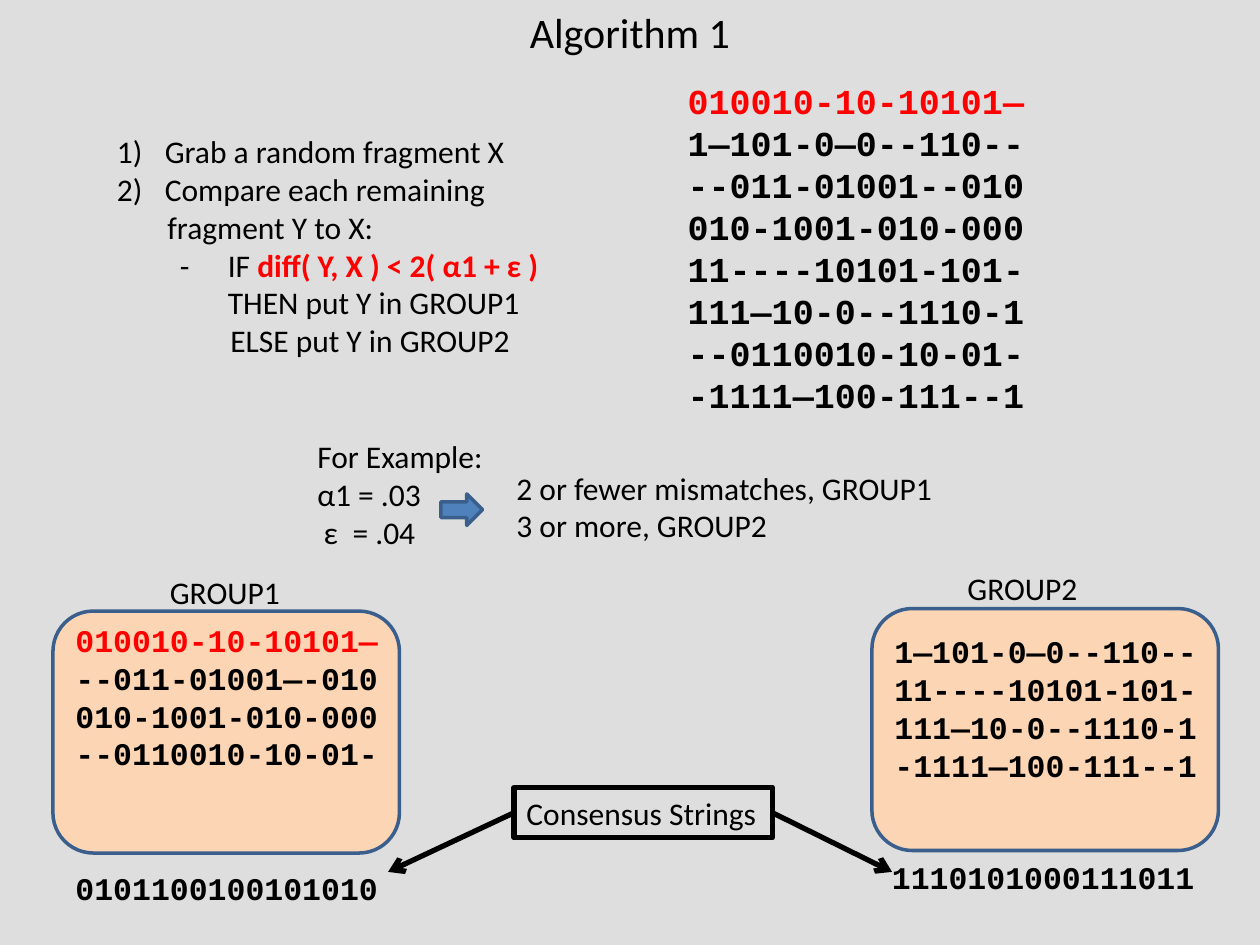
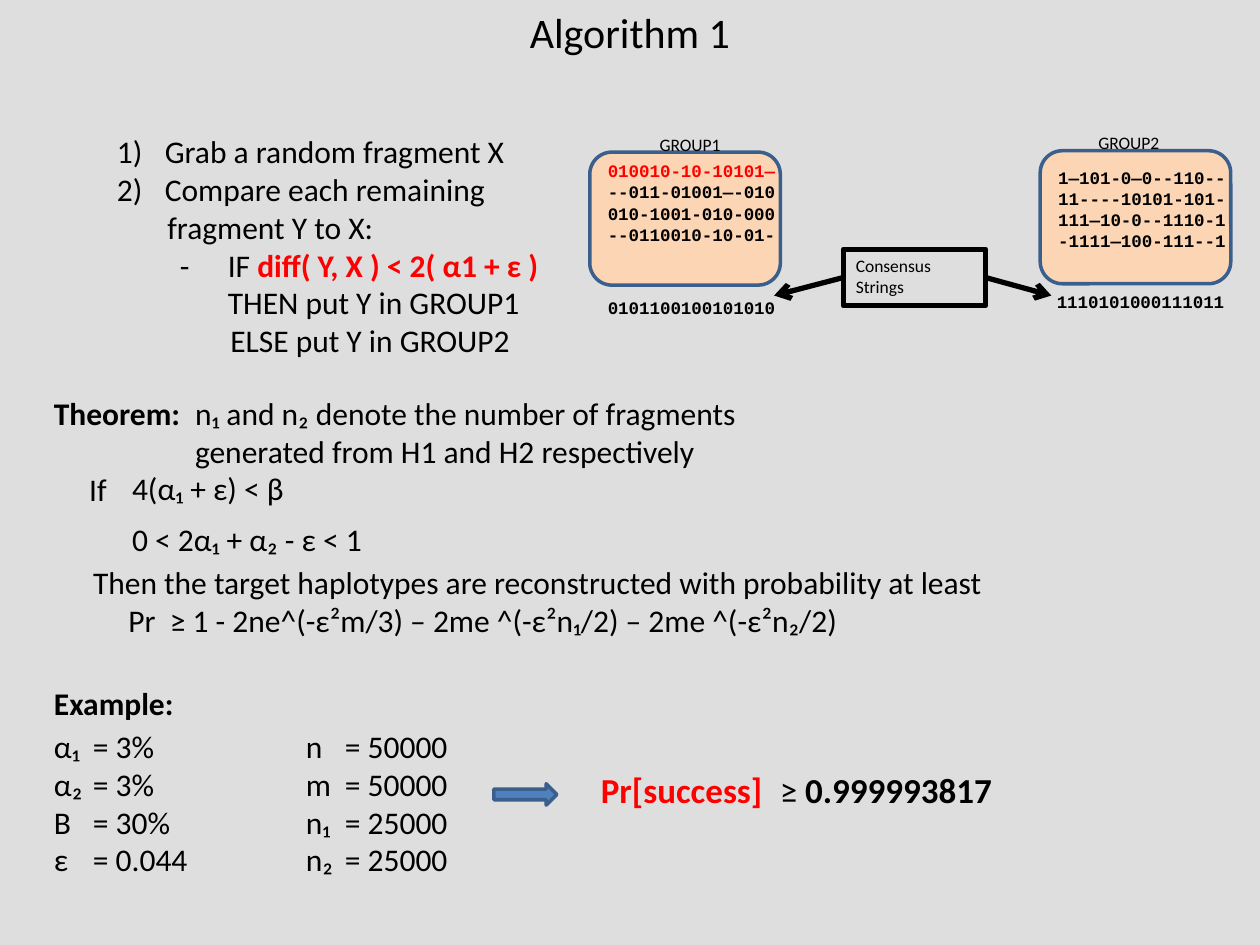
from lxml.etree import SubElement
from pptx import Presentation
from pptx.dml.color import RGBColor
from pptx.enum.shapes import MSO_CONNECTOR, MSO_SHAPE
from pptx.enum.text import MSO_ANCHOR, PP_ALIGN
from pptx.oxml.ns import qn
from pptx.util import Inches, Pt

# Shared look
BACKGROUND, INK, RED = "DEDEDE", "000000", "FF0000"
PEACH, BLUE, BLUE_EDGE = "FCD5B5", "4F81BD", "3A5F8C"
BODY_FONT, CODE_FONT = "Calibri", "Courier New"

# Content: a paragraph is a string or (runs, layout); a run is (words, format).
# In a layout, a tab after the hanging part jumps to the left indent.
TITLE = "Algorithm 1"
KEY = {"color": RED, "bold": True}
SEED = ([("010010-10-10101—", {"color": RED})], {})

STEPS = [
    ("Grab a random fragment X", {"left": 0.38, "hang": 0.38, "number": True}),
    ("Compare each remaining", {"left": 0.38, "hang": 0.38, "number": True}),
    ("fragment Y to X:", {"left": 0.4}),
    ([("-\tIF ", {}), ("diff( Y, X ) < 2( α1 + ε )", KEY)],
     {"left": 0.88, "hang": 0.38}),
    ("THEN put Y in GROUP1", {"left": 0.88}),
    ("ELSE put Y in GROUP2", {"left": 0.9}),
]

FRAGMENTS = [
    SEED, "1—101-0—0--110--", "--011-01001--010", "010-1001-010-000",
    "11----10101-101-", "111—10-0--1110-1", "--0110010-10-01-",
    "-1111—100-111--1",
]

# Positions are those at full scale on the first slide
GROUPS = [
    {"name": "GROUP1", "name_at": (1.25, 4.5), "box_at": (0.42, 4.85),
     "members": [SEED, "--011-01001—-010", "010-1001-010-000",
                 "--0110010-10-01-"],
     "members_at": (0.5, 4.88),
     "consensus": "0101100100101010", "consensus_at": (0.5, 6.85),
     "arrow_from": 4.08, "arrow_to": (3.08, 6.92)},
    {"name": "GROUP2", "name_at": (7.58, 4.47), "box_at": (6.92, 4.83),
     "members": ["1—101-0—0--110--", "11----10101-101-",
                 "111—10-0--1110-1", "-1111—100-111--1"],
     "members_at": (7, 4.97),
     "consensus": "1110101000111011", "consensus_at": (6.98, 6.76),
     "arrow_from": 6.13, "arrow_to": (7.08, 6.92)},
]

THRESHOLDS = ["For Example:", "α1 = .03",
              ("ε\t= .04", {"left": 0.28, "hang": 0.23})]
OUTCOMES = ["2 or fewer mismatches, GROUP1", "3 or more, GROUP2"]

THEOREM = [
    ([("Theorem:", {"bold": True}),
      ("\tn₁ and n₂ denote the number of fragments", {})],
     {"left": 1.12, "hang": 1.12}),
    ("generated from H1 and H2 respectively", {"left": 1.12}),
    ("If", {"left": 0.28}),
]
CONDITIONS = [("4(α₁ + ε) < β", 3.67), ("0 < 2α₁ + α₂ - ε < 1", 4.08)]
CONCLUSION = [
    ("Then the target haplotypes are reconstructed with probability at least",
     {"left": 0.06}),
    ("Pr\t≥ 1 - 2ne^(-ε²m/3) – 2me ^(-ε²n₁/2) – 2me ^(-ε²n₂/2)",
     {"left": 0.67, "hang": 0.33}),
]
# Each column of settings: left edge and its (symbol, value) rows
SETTINGS = [
    (0.33, [("α₁", "3%"), ("α₂", "3%"), ("Β", "30%"), ("ε", "0.044")]),
    (2.33, [("n", "50000"), ("m", "50000"), ("n₁", "25000"),
            ("n₂", "25000")]),
]
SUCCESS = [([("Pr[success]", KEY), ("\t≥ ", {}),
             ("0.999993817", {"bold": True})], {"left": 1.42, "hang": 1.42})]


# Drawing helpers
def rgb(value):
    return RGBColor.from_string(value)


def write(frame, paragraphs, size=18, font=BODY_FONT, color=INK, bold=False,
          align=PP_ALIGN.LEFT, anchor=MSO_ANCHOR.TOP):
    frame.word_wrap = True
    frame.vertical_anchor = anchor
    for index, entry in enumerate(paragraphs):
        runs, layout = (entry, {}) if isinstance(entry, str) else entry
        paragraph = frame.add_paragraph() if index else frame.paragraphs[0]
        paragraph.alignment = align
        arrange(paragraph, **layout)
        for words, look in [(runs, {})] if isinstance(runs, str) else runs:
            run = paragraph.add_run()
            run.text = words
            run.font.name, run.font.size = font, Pt(size)
            run.font.bold = look.get("bold", bold)
            run.font.color.rgb = rgb(look.get("color", color))


def arrange(paragraph, left=0, hang=0, number=False):
    props = paragraph._p.get_or_add_pPr()
    props.set("marL", str(Inches(left)))
    props.set("indent", str(-Inches(hang)))
    if number:
        SubElement(props, qn("a:buFont"), typeface="+mj-lt")
        SubElement(props, qn("a:buAutoNum"), type="arabicParenR")


def add_text(slide, paragraphs, at, **look):
    box = slide.shapes.add_textbox(*map(Inches, at))
    write(box.text_frame, paragraphs, **look)


def add_block(slide, preset, at, fill=None, edge=BLUE_EDGE, weight=2):
    block = slide.shapes.add_shape(preset, *map(Inches, at))
    block.shadow.inherit = False
    if fill:
        block.fill.solid()
        block.fill.fore_color.rgb = rgb(fill)
    else:
        block.fill.background()
    block.line.color.rgb = rgb(edge)
    block.line.width = Pt(weight)
    return block


def add_arrow(slide, start, end):
    arrow = slide.shapes.add_connector(
        MSO_CONNECTOR.STRAIGHT, *map(Inches, (*start, *end)))
    arrow.line.color.rgb = rgb(INK)
    arrow.line.width = Pt(3)
    SubElement(arrow.line._get_or_add_ln(), qn("a:tailEnd"), type="arrow")
    SubElement(arrow._element.spPr, qn("a:effectLst"))


def add_grouping(slide, scale=1, origin=(0, 0), size=18, hub_height=0.4):
    """Draw both groups and their consensus strings, scaled from origin."""
    def place(x, y):
        return origin[0] + scale * x, origin[1] + scale * y

    def area(corner, width, height):
        return (*place(*corner), scale * width, scale * height)

    code = {"size": size, "font": CODE_FONT, "bold": True}
    hub_left, hub_top = place(4.08, 6.25)
    for group in GROUPS:
        add_block(slide, MSO_SHAPE.ROUNDED_RECTANGLE,
                  area(group["box_at"], 2.75, 1.92), PEACH)
        add_text(slide, [group["name"]], area(group["name_at"], 1.3, 0.4),
                 size=size)
        add_text(slide, group["members"],
                 area(group["members_at"], 2.85, 1.62), **code)
        add_text(slide, [group["consensus"]],
                 area(group["consensus_at"], 2.85, 0.4), **code)
        add_arrow(slide,
                  (place(group["arrow_from"], 0)[0], hub_top + hub_height / 2),
                  place(*group["arrow_to"]))
    hub = add_block(slide, MSO_SHAPE.RECTANGLE,
                    (hub_left, hub_top, scale * 2.05, hub_height),
                    edge=INK, weight=3)
    write(hub.text_frame, ["Consensus Strings"], size=size)


def add_algorithm_slide(deck):
    slide = deck.slides.add_slide(deck.slide_layouts[6])
    add_text(slide, [TITLE], (0, 0, 10, 0.5), size=24,
             align=PP_ALIGN.CENTER, anchor=MSO_ANCHOR.MIDDLE)
    add_text(slide, STEPS, (0.83, 1, 3.8, 1.92))
    return slide


def main():
    deck = Presentation()
    deck.slide_width, deck.slide_height = Inches(10), Inches(7.5)
    backdrop = deck.slide_master.background.fill
    backdrop.solid()
    backdrop.fore_color.rgb = rgb(BACKGROUND)

    # Slide 1: grouping the fragments
    slide = add_algorithm_slide(deck)
    add_text(slide, FRAGMENTS, (5.36, 0.58, 3, 2.79),
             size=20, font=CODE_FONT, bold=True)
    add_grouping(slide)
    add_text(slide, THRESHOLDS, (2.42, 3.42, 1.6, 1.01))
    add_text(slide, OUTCOMES, (4, 3.67, 3.7, 0.71))
    add_block(slide, MSO_SHAPE.RIGHT_ARROW, (3.5, 3.92, 0.33, 0.25), BLUE)

    # Slide 2: theorem and worked example
    slide = add_algorithm_slide(deck)
    add_grouping(slide, scale=0.55, origin=(4.45, -1.46), size=10,
                 hub_height=0.45)
    add_text(slide, THEOREM, (0.33, 3.08, 9.67, 1.62))
    for condition, top in CONDITIONS:
        add_text(slide, [condition], (0.95, top, 2.3, 0.4))
    add_text(slide, CONCLUSION, (0.58, 4.42, 9.42, 0.71))
    add_text(slide, ["Example:"], (0.33, 5.38, 1.3, 0.4), bold=True)
    for left, rows in SETTINGS:
        add_text(slide, [(f"{symbol}\t= {value}", {"left": 0.31, "hang": 0.31})
                         for symbol, value in rows], (left, 5.72, 1.5, 1.32))
    add_block(slide, MSO_SHAPE.RIGHT_ARROW, (3.92, 6.22, 0.5, 0.17), BLUE)
    add_text(slide, SUCCESS, (4.67, 6.05, 3.92, 0.44), size=20)

    deck.save("out.pptx")


if __name__ == "__main__":
    main()
